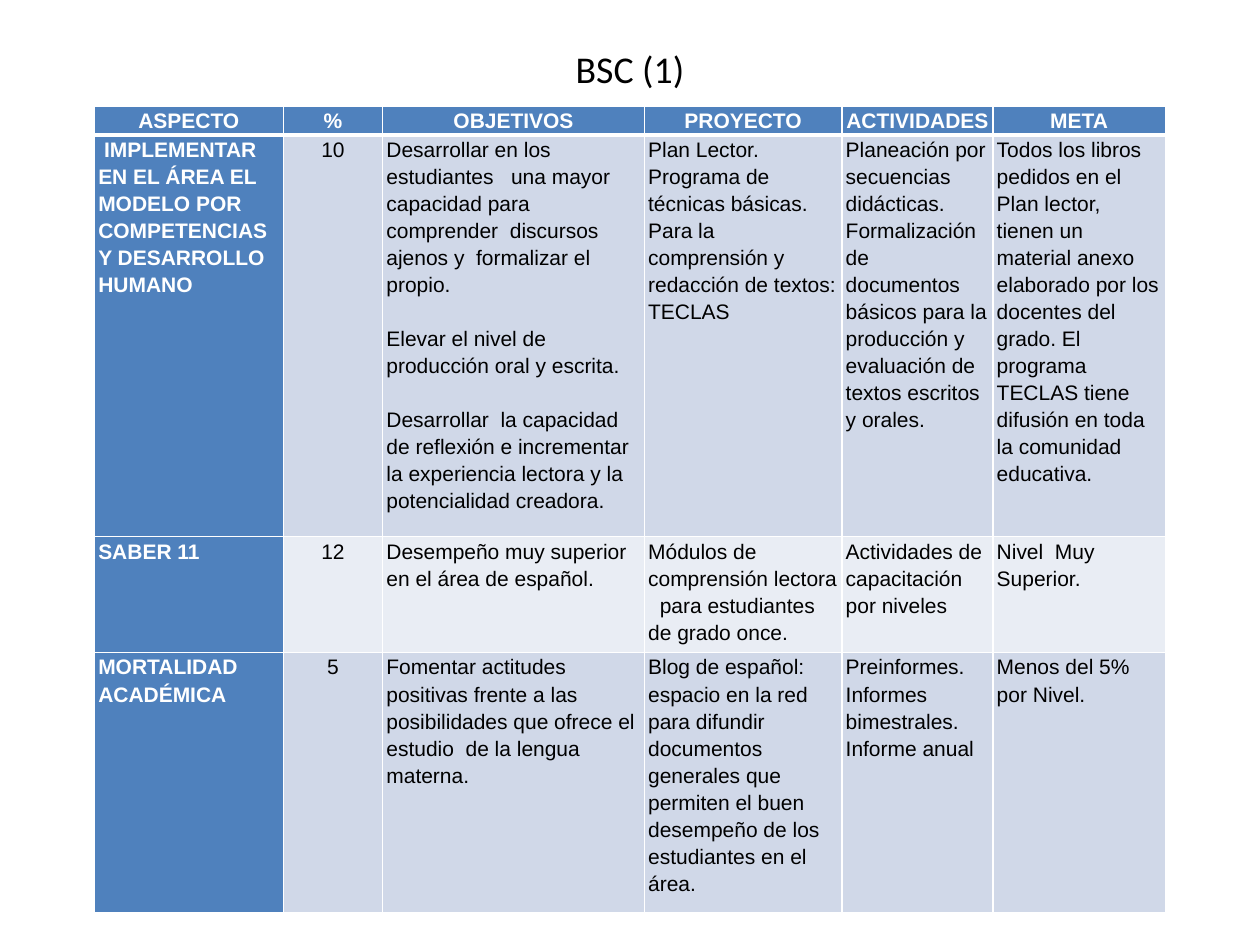
from lxml.etree import SubElement
from pptx import Presentation
from pptx.dml.color import RGBColor
from pptx.enum.text import MSO_ANCHOR as Anchor, PP_ALIGN as Align
from pptx.oxml.ns import qn
from pptx.util import Inches, Pt

BLUE, WHITE, BLACK = "4F81BD", "FFFFFF", "000000"
BANDS = ["D0D8E8", "E9EDF4"]
COLUMN_WIDTHS = [1.5, 0.79, 2.08, 1.57, 1.2, 1.37]
LINES_PER_ROW = [1, 14, 4, 9]
LINE_HEIGHT = 0.2145
PARAGRAPH_GAP = 15.4

ROWS = [
    ["ASPECTO", "%", "OBJETIVOS", "PROYECTO", "ACTIVIDADES", "META"],
    [
        " IMPLEMENTAR EN EL ÁREA EL MODELO POR COMPETENCIAS Y DESARROLLO HUMANO",
        "10",
        "Desarrollar en los  estudiantes   una mayor capacidad para comprender  discursos ajenos y  formalizar el propio.\n"
        "Elevar el nivel de producción oral y escrita.\n"
        "Desarrollar  la capacidad de reflexión e incrementar la experiencia lectora y la potencialidad creadora.",
        "Plan Lector. Programa de técnicas básicas. Para la comprensión y redacción de textos: TECLAS",
        "Planeación por secuencias didácticas. Formalización de documentos básicos para la producción y "
        "evaluación de textos escritos y orales.",
        "Todos los libros pedidos en el Plan lector, tienen un material anexo elaborado por los docentes del grado. "
        "El programa TECLAS tiene difusión en toda la comunidad educativa.",
    ],
    [
        "SABER 11",
        "12",
        "Desempeño muy superior en el área de español.",
        "Módulos de comprensión lectora   para estudiantes de grado once.",
        "Actividades de capacitación por niveles",
        "Nivel  Muy Superior.",
    ],
    [
        "MORTALIDAD ACADÉMICA",
        "5",
        "Fomentar actitudes positivas frente a las posibilidades que ofrece el estudio  de la lengua materna.",
        "Blog de español: espacio en la red para difundir documentos generales que permiten el buen desempeño "
        "de los estudiantes en el área.",
        "Preinformes. Informes bimestrales. Informe anual",
        "Menos del 5% por Nivel.",
    ],
]


def color(value):
    return RGBColor.from_string(value)


def add_run(paragraph, text, font, size, ink, bold=False):
    run = paragraph.add_run()
    run.text = text
    run.font.name = font
    run.font.size = Pt(size)
    run.font.bold = bold
    run.font.color.rgb = color(ink)


def set_borders(cell, bottom_width):
    properties = cell._tc.get_or_add_tcPr()
    widths = {"a:lnL": 1, "a:lnR": 1, "a:lnT": 1, "a:lnB": bottom_width}
    for index, (tag, width) in enumerate(widths.items()):
        line = SubElement(properties, qn(tag), w=str(Pt(width)))
        fill = SubElement(line, qn("a:solidFill"))
        SubElement(fill, qn("a:srgbClr"), val=WHITE)
        properties.insert(index, line)


def fill_cell(cell, text, row, column):
    heading = row == 0 or column == 0
    cell.fill.solid()
    cell.fill.fore_color.rgb = color(BLUE if heading else BANDS[(row - 1) % 2])
    cell.margin_left = cell.margin_right = Inches(0.03)
    cell.margin_top = cell.margin_bottom = 0
    cell.vertical_anchor = Anchor.TOP
    set_borders(cell, 3 if row == 0 else 1)
    for index, part in enumerate(text.split("\n")):
        frame = cell.text_frame
        paragraph = frame.add_paragraph() if index else frame.paragraphs[0]
        paragraph.alignment = Align.CENTER if row == 0 or column == 1 else Align.LEFT
        paragraph.line_spacing = 1.15
        paragraph.space_before = Pt(PARAGRAPH_GAP if index else 0)
        add_run(paragraph, part, "Arial", 12, WHITE if heading else BLACK, heading)


def add_title(slide, left, top, width, height):
    shape = slide.shapes.add_textbox(Inches(left), Inches(top), Inches(width), Inches(height))
    frame = shape.text_frame
    frame.word_wrap = True
    frame.vertical_anchor = Anchor.MIDDLE
    paragraph = frame.paragraphs[0]
    paragraph.alignment = Align.CENTER
    add_run(paragraph, "BSC (1)", "Calibri", 21.6, BLACK)


def add_scorecard(slide, left, top, width):
    height = sum(LINES_PER_ROW) * LINE_HEIGHT
    frame = slide.shapes.add_table(
        len(ROWS), len(COLUMN_WIDTHS), Inches(left), Inches(top), Inches(width), Inches(height)
    )
    table = frame.table
    table.horz_banding = False
    for column, share in zip(table.columns, COLUMN_WIDTHS):
        column.width = Inches(width * share / sum(COLUMN_WIDTHS))
    for row, lines in zip(table.rows, LINES_PER_ROW):
        row.height = Inches(lines * LINE_HEIGHT)
    for row, texts in enumerate(ROWS):
        for column, text in enumerate(texts):
            fill_cell(table.cell(row, column), text, row, column)


def main():
    presentation = Presentation()
    presentation.slide_width = Inches(10)
    presentation.slide_height = Inches(7.5)
    slide = presentation.slides.add_slide(presentation.slide_layouts[6])
    add_title(slide, 0.5, 0.31, 9, 0.46)
    add_scorecard(slide, 0.75, 0.84, 8.5)
    presentation.save("out.pptx")


if __name__ == "__main__":
    main()
